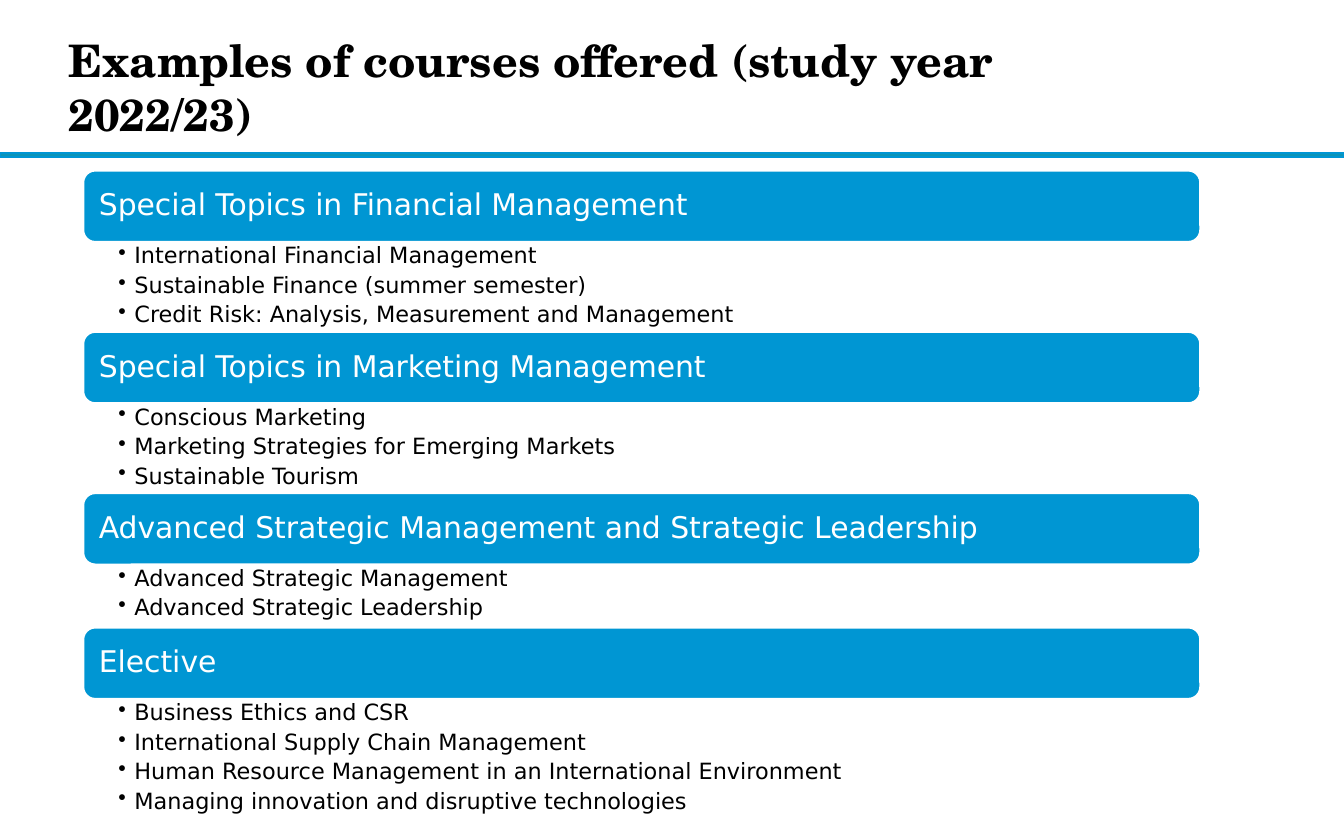
"""Build the slide listing example courses by subject area."""
from typing import NamedTuple

from lxml.etree import SubElement
from pptx import Presentation
from pptx.dml.color import RGBColor
from pptx.enum.shapes import MSO_SHAPE as Preset
from pptx.enum.text import MSO_ANCHOR as Anchor, PP_ALIGN as Align
from pptx.oxml.ns import qn
from pptx.util import Emu, Inches, Pt

COLORS = {"band": "0C94B7", "bar": "0096D3", "white": "FFFFFF", "ink": "000000"}
TITLE_FONT, BODY_FONT = "TeX Gyre Schola", "DejaVu Sans"
CELL = Inches(0.1)
BAR_ROWS, COURSE_ROWS, SECTION_GAP = 5.3, 2, 0.7


class Area(NamedTuple):
    """Place on the grid, in columns and rows."""
    col: float
    row: float
    cols: float
    rows: float

    def emu(self) -> list[Emu]:
        """Return left, top, width and height."""
        return [Emu(round(cells * CELL)) for cells in self]


class Style(NamedTuple):
    """Look of a run."""
    font: str
    size: float
    color: str
    bold: bool = False


class Section(NamedTuple):
    """Subject area and its courses."""
    heading: str
    courses: list[str]


TITLE = Style(TITLE_FONT, 24, "ink", True)
HEADING = Style(BODY_FONT, 16, "white")
COURSE = Style(BODY_FONT, 12, "ink")

SECTIONS = [
    Section("Special Topics in Financial Management", [
        "International Financial Management",
        "Sustainable Finance (summer semester)",
        "Credit Risk: Analysis, Measurement and Management",
    ]),
    Section("Special Topics in Marketing Management", [
        "Conscious Marketing",
        "Marketing Strategies for Emerging Markets",
        "Sustainable Tourism",
    ]),
    Section("Advanced Strategic Management and Strategic Leadership", [
        "Advanced Strategic Management",
        "Advanced Strategic Leadership",
    ]),
    Section("Elective", [
        "Business Ethics and CSR",
        "International Supply Chain Management",
        "Human Resource Management in an International Environment",
        "Managing innovation and disruptive technologies",
    ]),
]


def rgb(name: str) -> RGBColor:
    """Look up a named colour."""
    return RGBColor.from_string(COLORS[name])


def set_frame(frame, anchor: Anchor, left: float, top: float, right: float) -> None:
    """Set wrapping, anchor and insets in inches."""
    frame.word_wrap = True
    frame.vertical_anchor = anchor
    frame.margin_left, frame.margin_right = Inches(left), Inches(right)
    frame.margin_top = frame.margin_bottom = Inches(top)


def add_run(paragraph, text: str, style: Style) -> None:
    """Add one styled run, aligned left."""
    paragraph.alignment = Align.LEFT
    run = paragraph.add_run()
    run.text = text
    run.font.name, run.font.size = style.font, Pt(style.size)
    run.font.bold = style.bold
    run.font.color.rgb = rgb(style.color)


def add_block(slide, preset: Preset, area: Area, fill: str, line: str):
    """Add a flat filled shape with a one-point outline."""
    block = slide.shapes.add_shape(preset, *area.emu())
    block.shadow.inherit = False
    block.fill.solid()
    block.fill.fore_color.rgb = rgb(fill)
    block.line.color.rgb = rgb(line)
    block.line.width = Pt(1)
    return block


def add_title(slide, text: str) -> None:
    """Add the slide title."""
    frame = slide.shapes.add_textbox(*Area(5.1, 1.5, 74.8, 9.9).emu()).text_frame
    set_frame(frame, Anchor.MIDDLE, 0, 0, 0)
    add_run(frame.paragraphs[0], text, TITLE)


def add_heading(slide, text: str, area: Area) -> None:
    """Add the bar that heads a section."""
    bar = add_block(slide, Preset.ROUNDED_RECTANGLE, area, "bar", "white")
    set_frame(bar.text_frame, Anchor.MIDDLE, 0.09, 0.07, 0.09)
    paragraph = bar.text_frame.paragraphs[0]
    paragraph.line_spacing = 0.9
    add_run(paragraph, text, HEADING)


def add_courses(slide, courses: list[str], area: Area) -> None:
    """Add the bulleted courses of a section."""
    frame = slide.shapes.add_textbox(*area.emu()).text_frame
    set_frame(frame, Anchor.TOP, 0.26, 0.02, 0.09)
    for index, course in enumerate(courses):
        paragraph = frame.add_paragraph() if index else frame.paragraphs[0]
        paragraph.level = 1
        paragraph.line_spacing, paragraph.space_after = 0.9, Pt(2.8)
        props = paragraph._p.get_or_add_pPr()
        props.set("marL", str(Inches(0.12)))
        props.set("indent", str(-Inches(0.12)))
        SubElement(props, qn("a:buChar"), char="•")
        add_run(paragraph, course, COURSE)


def main() -> None:
    """Draw the slide and save it."""
    deck = Presentation()
    deck.slide_width, deck.slide_height = Inches(10), Inches(6.25)
    slide = deck.slides.add_slide(deck.slide_layouts[6])
    add_block(slide, Preset.RECTANGLE, Area(0, 11.4, 100, 0.3), "band", "bar")
    add_title(slide, "Examples of courses offered (study year 2022/23)")

    col, row, cols = 6.2, 12.7, 83.1
    for heading, courses in SECTIONS:
        list_rows = COURSE_ROWS * len(courses) + SECTION_GAP
        add_heading(slide, heading, Area(col, row, cols, BAR_ROWS))
        add_courses(slide, courses, Area(col, row + BAR_ROWS, cols, list_rows))
        row += BAR_ROWS + list_rows
    deck.save("out.pptx")


if __name__ == "__main__":
    main()
